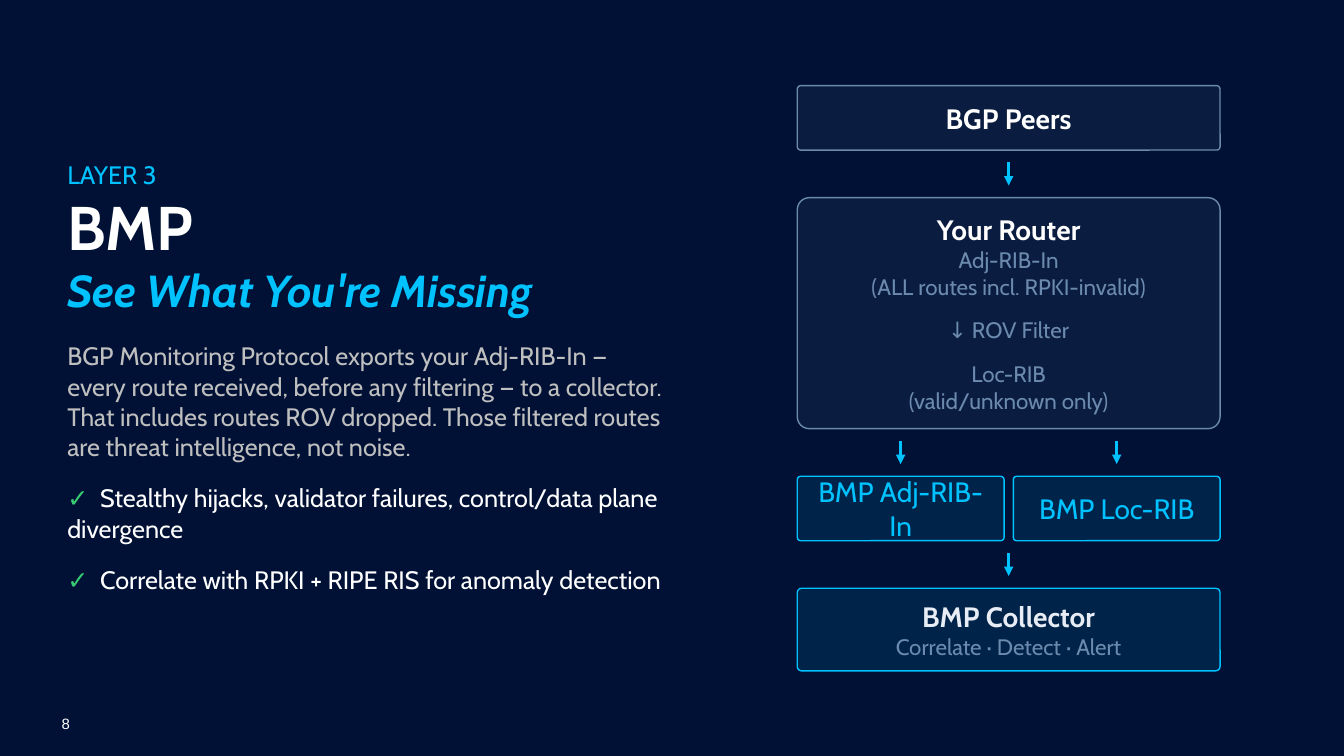
import dataclasses

import pptx
import pptx.dml.color
import pptx.enum.shapes
import pptx.enum.text
import pptx.oxml.ns
import pptx.util
from lxml import etree

Pt = pptx.util.Pt
ANCHOR = pptx.enum.text.MSO_ANCHOR
ALIGN = pptx.enum.text.PP_ALIGN
qn = pptx.oxml.ns.qn


@dataclasses.dataclass(frozen=True)
class Theme:
    font: str = "Cabin"
    number_font: str = "Arial"
    background: str = "001135"
    accent: str = "00C2FF"
    steel: str = "6B8AAD"
    white: str = "FFFFFF"
    pale: str = "E8EDF5"
    grey: str = "BFBFBF"
    green: str = "37CC73"
    title: float = 44
    subtitle: float = 32
    heading: float = 20
    body: float = 18
    detail: float = 16
    number: float = 10.7


THEME = Theme()


def rgb(color):
    return pptx.dml.color.RGBColor.from_string(color)


def add_run(paragraph, text, size, color, bold=False, italic=False, font=THEME.font):
    run = paragraph.add_run()
    run.text = text
    run.font.name = font
    run.font.size = Pt(size)
    run.font.color.rgb = rgb(color)
    run.font.bold = bold
    run.font.italic = italic


def next_paragraph(frame, space_before=0, align=ALIGN.LEFT):
    first = frame.paragraphs[0]
    paragraph = frame.add_paragraph() if first.runs else first
    paragraph.alignment = align
    paragraph.space_before = Pt(space_before)
    return paragraph


def add_text(slide, left, top, width, height, anchor=ANCHOR.TOP):
    frame = slide.shapes.add_textbox(Pt(left), Pt(top), Pt(width), Pt(height)).text_frame
    frame.word_wrap = True
    frame.vertical_anchor = anchor
    return frame


def add_check(frame, text):
    paragraph = next_paragraph(frame, 15)
    tabs = etree.SubElement(paragraph._p.get_or_add_pPr(), qn("a:tabLst"))
    etree.SubElement(tabs, qn("a:tab"), pos=str(Pt(23.5)), algn="l")
    add_run(paragraph, "✓\t", THEME.body, THEME.green)
    add_run(paragraph, text, THEME.body, THEME.white)


def add_box(slide, left, top, width, height, color):
    box = slide.shapes.add_shape(
        pptx.enum.shapes.MSO_SHAPE.ROUNDED_RECTANGLE, Pt(left), Pt(top), Pt(width), Pt(height))
    box.adjustments[0] = 0.052
    box.shadow.inherit = False
    box.fill.solid()
    box.fill.fore_color.rgb = rgb(color)
    tint = box._element.spPr.find(qn("a:solidFill")).find(qn("a:srgbClr"))
    etree.SubElement(tint, qn("a:alpha"), val="10000")
    box.line.color.rgb = rgb(color)
    box.line.width = Pt(1)
    box.text_frame.word_wrap = True
    box.text_frame.vertical_anchor = ANCHOR.MIDDLE
    return box.text_frame


def add_label(frame, text, color, bold=False):
    paragraph = next_paragraph(frame, align=ALIGN.CENTER)
    add_run(paragraph, text, THEME.heading, color, bold)
    return paragraph


def add_arrow(slide, x, gap_top):
    arrow = slide.shapes.add_connector(
        pptx.enum.shapes.MSO_CONNECTOR.STRAIGHT,
        Pt(x), Pt(gap_top + 8.7), Pt(x), Pt(gap_top + 25.3))
    arrow.line.color.rgb = rgb(THEME.accent)
    arrow.line.width = Pt(2.25)
    etree.SubElement(arrow.line._get_or_add_ln(), qn("a:tailEnd"), type="triangle")
    etree.SubElement(arrow._element.spPr, qn("a:effectLst"))


def add_message(slide):
    heading = add_text(slide, 41, 109.4, 756, 121, ANCHOR.MIDDLE)
    add_run(next_paragraph(heading), "LAYER 3", THEME.body, THEME.accent)
    add_run(next_paragraph(heading), "BMP", THEME.title, THEME.white, bold=True)
    add_run(next_paragraph(heading), "See What You're Missing", THEME.subtitle,
            THEME.accent, bold=True, italic=True)

    body = add_text(slide, 41, 239.8, 443.5, 190)
    add_run(next_paragraph(body),
            "BGP Monitoring Protocol exports your Adj-RIB-In — every route received, "
            "before any filtering — to a collector. That includes routes ROV dropped. "
            "Those filtered routes are threat intelligence, not noise.",
            THEME.body, THEME.grey)
    add_check(body, "Stealthy hijacks, validator failures, control/data plane divergence")
    add_check(body, "Correlate with RPKI + RIPE RIS for anomaly detection")


def add_flow(slide):
    left, width, gap = 569.5, 302, 34
    row, router_height, collector_height = 46, 165, 59
    feed_width = 147.7
    center = left + width / 2
    peers_top = 61.2
    router_top = peers_top + row + gap
    feeds_top = router_top + router_height + gap
    collector_top = feeds_top + row + gap

    peers = add_box(slide, left, peers_top, width, row, THEME.steel)
    add_label(peers, "BGP Peers", THEME.white, bold=True)

    router = add_box(slide, left, router_top, width, router_height, THEME.steel)
    add_label(router, "Your Router", THEME.white, bold=True)
    for text, space in (("Adj-RIB-In", 0), ("(ALL routes incl. RPKI-invalid)", 0),
                        ("↓ ROV Filter", 12), ("Loc-RIB", 12), ("(valid/unknown only)", 0)):
        add_run(next_paragraph(router, space, ALIGN.CENTER), text, THEME.detail, THEME.steel)

    for name, feed_left in (("BMP Adj-RIB-In", left),
                            ("BMP Loc-RIB", left + width - feed_width)):
        feed = add_box(slide, feed_left, feeds_top, feed_width, row, THEME.accent)
        add_label(feed, name, THEME.accent)
        add_arrow(slide, feed_left + feed_width / 2, feeds_top - gap)

    collector = add_box(slide, left, collector_top, width, collector_height, THEME.accent)
    caption = add_label(collector, "BMP Collector", THEME.pale, bold=True)
    caption.add_line_break()
    add_run(caption, "Correlate · Detect · Alert", THEME.detail, THEME.steel)

    for below in (router_top, collector_top):
        add_arrow(slide, center, below - gap)


def add_page_number(slide):
    frame = add_text(slide, 44, 510, 13, 13, ANCHOR.BOTTOM)
    frame.word_wrap = False
    frame.margin_left = frame.margin_right = frame.margin_top = frame.margin_bottom = 0
    add_run(next_paragraph(frame), "8", THEME.number, THEME.white, font=THEME.number_font)


def main():
    deck = pptx.Presentation()
    deck.slide_width, deck.slide_height = Pt(960), Pt(540)
    slide = deck.slides.add_slide(deck.slide_layouts[6])
    slide.background.fill.solid()
    slide.background.fill.fore_color.rgb = rgb(THEME.background)
    add_page_number(slide)
    add_message(slide)
    add_flow(slide)
    deck.save("out.pptx")


if __name__ == "__main__":
    main()
